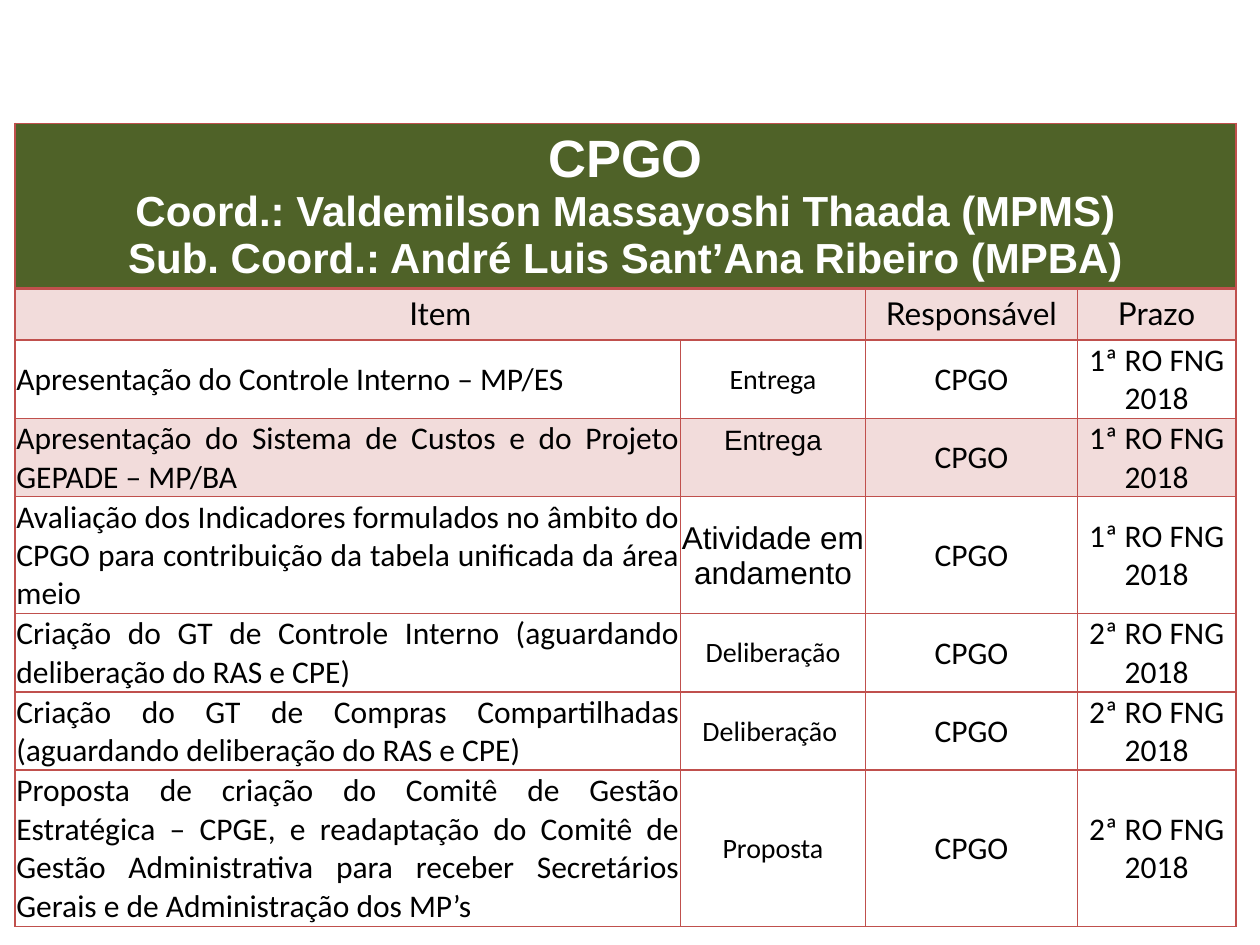
import pptx
import pptx.util
import pptx.dml.color
import pptx.enum.text
import pptx.oxml.ns
import lxml.etree

COLORS = {"green": "4F6228", "red": "C0504D", "white": "FFFFFF", "black": "000000"}
TINT_PERCENT = 20
SLIDE_SIZE = (10, 7.5)
TABLE_ORIGIN = (0.12, 0.98)
COLUMN_WIDTHS = (5.28, 1.47, 1.68, 1.26)
BANNER_HEIGHT, HEADING_HEIGHT, LINE_HEIGHT = 1.31, 0.41, 0.31
BANNER = [
    ("CPGO", 30),
    ("Coord.: Valdemilson Massayoshi Thaada (MPMS)", 24),
    ("Sub. Coord.: André Luis Sant’Ana Ribeiro (MPBA)", 24),
]
HEADINGS = ["Item", None, "Responsável", "Prazo"]
SMALL, SMALL_ARIAL, LARGE_ARIAL = ("Calibri", 16), ("Arial", 16), ("Arial", 18)
OWNER = "CPGO"
FIRST, SECOND = "1ª RO FNG 2018", "2ª RO FNG 2018"
ITEMS = [
    ("Apresentação do Controle Interno – MP/ES", "Entrega", SMALL, FIRST, 2),
    ("Apresentação do Sistema de Custos e do Projeto GEPADE – MP/BA",
     "Entrega", SMALL_ARIAL, FIRST, 2),
    ("Avaliação dos Indicadores formulados no âmbito do CPGO para contribuição "
     "da tabela unificada da área meio", "Atividade em andamento", LARGE_ARIAL, FIRST, 3),
    ("Criação do GT de Controle Interno (aguardando deliberação do RAS e CPE)",
     "Deliberação", SMALL, SECOND, 2),
    ("Criação do GT de Compras Compartilhadas (aguardando deliberação do RAS e CPE)",
     "Deliberação ", SMALL, SECOND, 2),
    ("Proposta de criação do Comitê de Gestão Estratégica – CPGE, e readaptação do "
     "Comitê de Gestão Administrativa para receber Secretários Gerais e de "
     "Administração dos MP’s", "Proposta", SMALL, SECOND, 4),
]
TINTED_ROWS = (1, 3)
RAISED_CELL = (3, 1)

Inches = pptx.util.Inches
Align = pptx.enum.text.PP_ALIGN
qn = pptx.oxml.ns.qn


def rgb(name):
    return pptx.dml.color.RGBColor.from_string(COLORS[name])


def write(paragraph, text, font, size, color="black", bold=False, align=Align.CENTER):
    paragraph.text = text
    paragraph.alignment = align
    paragraph.font.name = font
    paragraph.font.size = pptx.util.Pt(size)
    paragraph.font.bold = bold
    paragraph.font.color.rgb = rgb(color)


def paint(cell, row):
    if row == 0 or row in TINTED_ROWS:
        cell.fill.solid()
        cell.fill.fore_color.rgb = rgb("red" if row else "green")
        if row:
            color = cell._tc.tcPr.find(".//" + qn("a:srgbClr"))
            lxml.etree.SubElement(color, qn("a:alpha"), val=str(TINT_PERCENT * 1000))
    else:
        cell.fill.background()


def outline(cell, row):
    properties = cell._tc.get_or_add_tcPr()
    for position, side in enumerate("LRTB"):
        thick = (row, side) in ((0, "B"), (1, "T"))
        line = lxml.etree.Element(qn("a:ln" + side), w=str(pptx.util.Pt(2 if thick else 1)))
        fill = lxml.etree.SubElement(line, qn("a:solidFill"))
        lxml.etree.SubElement(fill, qn("a:srgbClr"), val=COLORS["red"])
        properties.insert(position, line)


def main():
    deck = pptx.Presentation()
    deck.slide_width, deck.slide_height = map(Inches, SLIDE_SIZE)
    page = deck.slides.add_slide(deck.slide_layouts[6])
    heights = [BANNER_HEIGHT, HEADING_HEIGHT] + [item[-1] * LINE_HEIGHT for item in ITEMS]
    frame = page.shapes.add_table(
        len(heights), len(COLUMN_WIDTHS), *map(Inches, TABLE_ORIGIN),
        Inches(sum(COLUMN_WIDTHS)), Inches(sum(heights)))
    table = frame.table
    table.first_row = table.horz_banding = False
    for column, width in zip(table.columns, COLUMN_WIDTHS):
        column.width = Inches(width)
    for row, height in zip(table.rows, heights):
        row.height = Inches(height)

    table.cell(0, 0).merge(table.cell(0, 3))
    table.cell(1, 0).merge(table.cell(1, 1))
    banner = table.cell(0, 0).text_frame
    for index, (text, size) in enumerate(BANNER):
        paragraph = banner.add_paragraph() if index else banner.paragraphs[0]
        write(paragraph, text, "Arial", size, "white", True)
    for column, text in enumerate(HEADINGS):
        if text:
            write(table.cell(1, column).text_frame.paragraphs[0], text, "Lato", 18)

    for row, (item, status, status_font, deadline, _) in enumerate(ITEMS, 2):
        for column, text in enumerate((item, status, OWNER, deadline)):
            cell = table.cell(row, column)
            cell.vertical_anchor = pptx.enum.text.MSO_ANCHOR.MIDDLE
            cell.margin_left = cell.margin_right = cell.margin_top = Inches(0.01)
            cell.margin_bottom = Inches(0.27 if (row, column) == RAISED_CELL else 0)
            font, size = status_font if column == 1 else ("Calibri", 18)
            write(cell.text_frame.paragraphs[0], text, font, size,
                  align=Align.CENTER if column else Align.JUSTIFY)

    for row in range(len(heights)):
        for column in range(len(COLUMN_WIDTHS)):
            paint(table.cell(row, column), row)
            outline(table.cell(row, column), row)
    deck.save("out.pptx")


if __name__ == "__main__":
    main()
